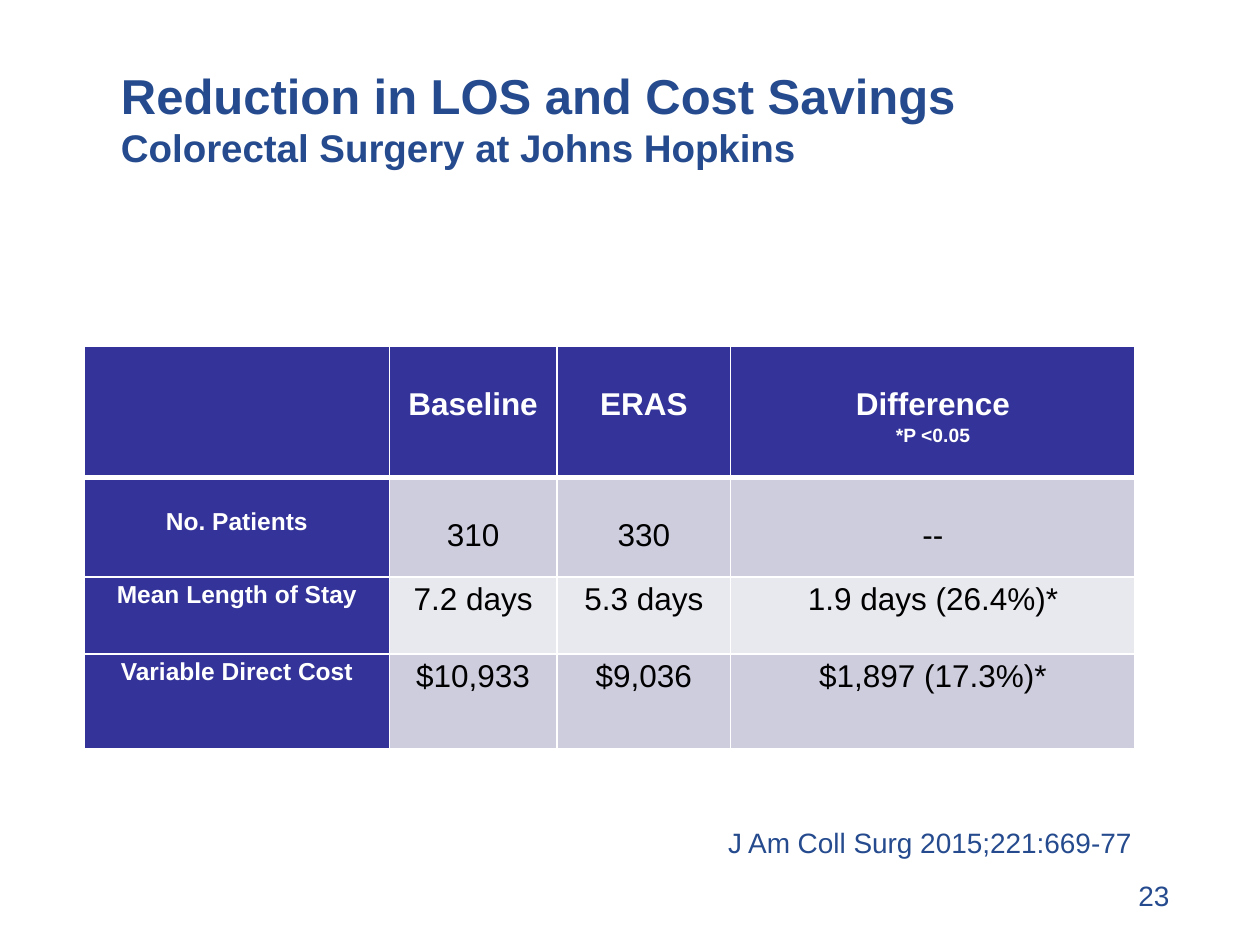
from lxml.etree import SubElement
from pptx import Presentation
from pptx.dml.color import RGBColor
from pptx.enum.text import MSO_ANCHOR, PP_ALIGN
from pptx.oxml.ns import qn
from pptx.util import Inches, Pt

HUES = {
    "blue": "254B8E", "navy": "333399", "white": "FFFFFF", "black": "000000",
    "band": "CDCDDE", "pale": "E8E8EF",
}
COLS = [2.42, 1.33, 1.38, 3.21]
ROWS = [1.04, 0.79, 0.61, 0.75]
DATA = [
    ["", "Baseline", "ERAS", "Difference\n*P <0.05"],
    ["No. Patients", "310", "330", "--"],
    ["Mean Length of Stay", "7.2 days", "5.3 days", "1.9 days (26.4%)*"],
    ["Variable Direct Cost", "$10,933", "$9,036", "$1,897 (17.3%)*"],
]


def style(font, size, hue, bold=False):
    look = {"name": "Arial", "size": Pt(size), "bold": bold}
    for key, value in look.items():
        setattr(font, key, value)
    font.color.rgb = RGBColor.from_string(HUES[hue])


def add_text(slide, box, lines, bold=False, wrap=True, align=PP_ALIGN.LEFT,
             left=0.1, top=0.05):
    """Add one paragraph whose lines are (text, size) pairs."""
    frame = slide.shapes.add_textbox(*map(Inches, box)).text_frame
    look = {
        "word_wrap": wrap, "vertical_anchor": MSO_ANCHOR.TOP,
        "margin_left": Inches(left), "margin_top": Inches(top),
    }
    for key, value in look.items():
        setattr(frame, key, value)
    para = frame.paragraphs[0]
    para.alignment = align
    for i, (text, size) in enumerate(lines):
        if i:
            para.add_line_break()
        run = para.add_run()
        run.text = text
        style(run.font, size, "blue", bold)


def add_edges(cell, row):
    """Draw white cell borders, thick below the header row."""
    props = cell._tc.get_or_add_tcPr()
    thick = {"lnB": 0, "lnT": 1}
    for i, tag in enumerate(("lnL", "lnR", "lnT", "lnB")):
        width = Pt(3 if thick.get(tag) == row else 1)
        line = props.makeelement(qn(f"a:{tag}"), {"w": str(width)})
        fill = SubElement(line, qn("a:solidFill"))
        SubElement(fill, qn("a:srgbClr"), val=HUES["white"])
        props.insert(i, line)


def fill_cell(cell, text, row, col):
    head = row == 0 or col == 0
    size = 14 if row and col == 0 else 18
    drop = 0 if row > 1 else 0.21 if size == 14 else 0.28
    look = {
        "margin_left": Inches(0.07), "margin_right": Inches(0.07),
        "margin_top": Inches(drop), "margin_bottom": 0,
        "vertical_anchor": MSO_ANCHOR.TOP, "text": text,
    }
    for key, value in look.items():
        setattr(cell, key, value)
    hue = "navy" if head else "band" if row % 2 else "pale"
    cell.fill.solid()
    cell.fill.fore_color.rgb = RGBColor.from_string(HUES[hue])
    for i, para in enumerate(cell.text_frame.paragraphs):
        para.alignment = PP_ALIGN.CENTER
        para.line_spacing = 1.15
        style(para.font, 11 if i else size, "white" if head else "black", head)
        for run in para.runs:
            style(run.font, 11 if i else size, "white" if head else "black", head)
    add_edges(cell, row)


def add_grid(slide, left, top):
    box = map(Inches, (left, top, sum(COLS), sum(ROWS)))
    table = slide.shapes.add_table(len(ROWS), len(COLS), *box).table
    for col, width in zip(table.columns, COLS):
        col.width = Inches(width)
    for row, height in zip(table.rows, ROWS):
        row.height = Inches(height)
    for r, line in enumerate(DATA):
        for c, text in enumerate(line):
            fill_cell(table.cell(r, c), text, r, c)


def main():
    deck = Presentation()
    deck.slide_width, deck.slide_height = Inches(10), Inches(7.5)
    slide = deck.slides.add_slide(deck.slide_layouts[6])
    title = [("Reduction in LOS and Cost Savings", 28),
             ("Colorectal Surgery at Johns Hopkins", 22)]
    add_text(slide, (0.89, 0.43, 7.28, 1.25), title, bold=True,
             left=0.07, top=0.09)
    add_grid(slide, 0.67, 2.75)
    add_text(slide, (5.68, 6.5, 3.44, 0.37),
             [("J Am Coll Surg 2015;221:669-77", 16)], wrap=False)
    add_text(slide, (8.92, 6.92, 0.46, 0.33), [("23", 16)],
             align=PP_ALIGN.RIGHT)
    deck.save("out.pptx")


if __name__ == "__main__":
    main()
